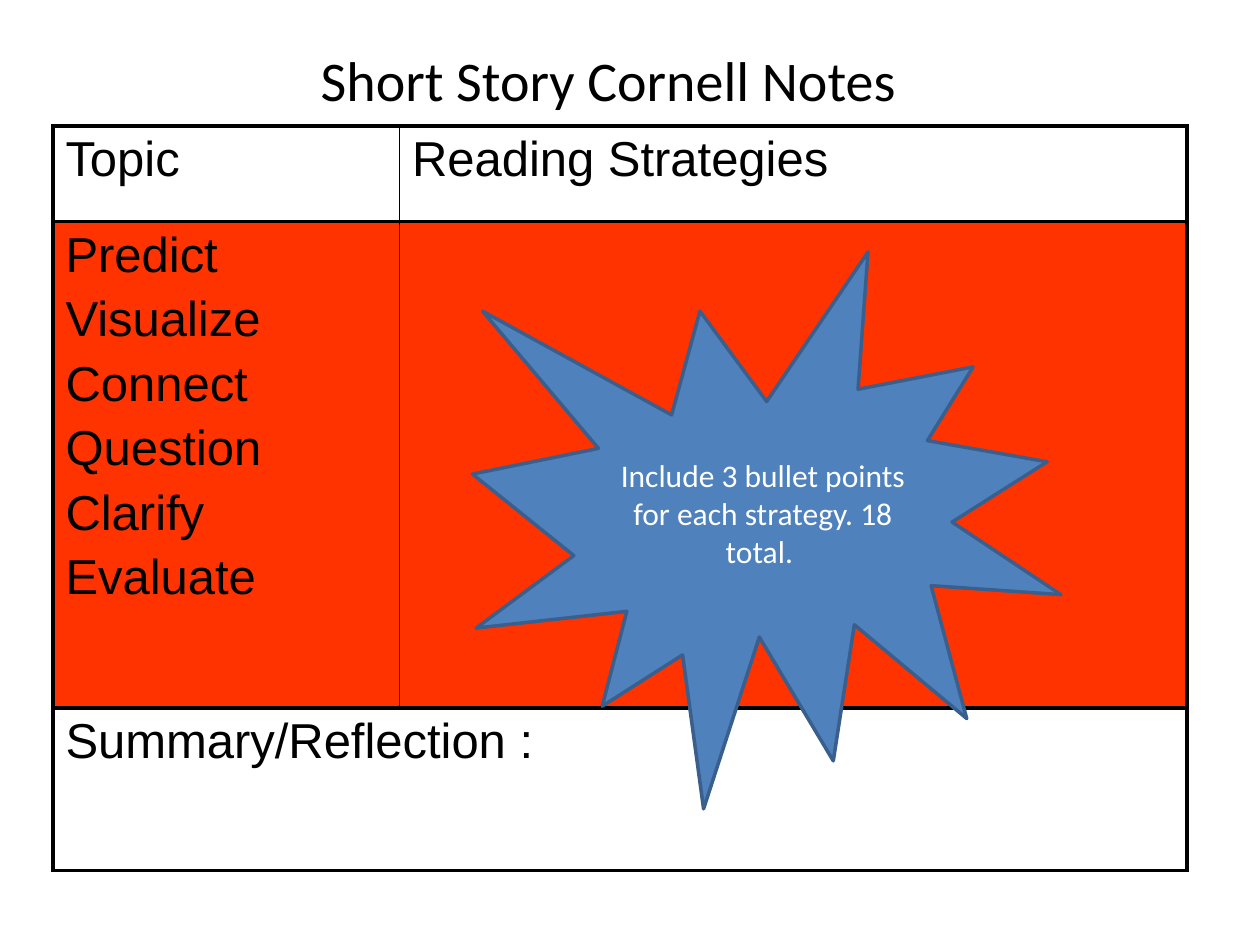
from pptx import Presentation
from pptx.dml.color import RGBColor
from pptx.enum.shapes import MSO_SHAPE
from pptx.enum.text import MSO_ANCHOR, PP_ALIGN
from pptx.oxml.xmlchemy import OxmlElement
from pptx.util import Inches, Pt

COLORS = {"ink": "000000", "strategy": "FF3300", "star": "4F81BD",
          "star_line": "3A5F8C", "star_text": "FFFFFF"}
STRATEGIES = ["Predict", "Visualize", "Connect", "Question", "Clarify", "Evaluate"]
THICK, THIN = 2.25, 1


def rgb(name):
    """Look up a named colour."""
    return RGBColor.from_string(COLORS[name])


def add_run(p, text, size, font, color):
    """Add one formatted run to a paragraph."""
    r = p.add_run()
    r.text = text
    r.font.size, r.font.name = Pt(size), font
    r.font.color.rgb = rgb(color)


def space_before(p, percent):
    """Set paragraph spacing as a share of the text size."""
    spc, pct = OxmlElement("a:spcBef"), OxmlElement("a:spcPct")
    pct.set("val", str(percent * 1000))
    spc.append(pct)
    p._p.get_or_add_pPr().append(spc)


def set_borders(cell, widths):
    """Draw the left, right, top and bottom borders of a cell."""
    tcPr = cell._tc.get_or_add_tcPr()
    for i, (side, width) in enumerate(zip("LRTB", widths)):
        ln, fill, clr = (OxmlElement(t) for t in (f"a:ln{side}", "a:solidFill", "a:srgbClr"))
        ln.set("w", str(Pt(width)))
        clr.set("val", COLORS["ink"])
        fill.append(clr)
        ln.append(fill)
        tcPr.insert(i, ln)


def fill_cell(cell, lines, color, widths):
    """Write lines into a cell and set its fill and borders."""
    if color:
        cell.fill.solid()
        cell.fill.fore_color.rgb = rgb(color)
    else:
        cell.fill.background()
    set_borders(cell, widths)
    tf = cell.text_frame
    for i, line in enumerate(lines):
        p = tf.paragraphs[0] if i == 0 else tf.add_paragraph()
        space_before(p, 20)
        add_run(p, line, 28, "Arial", "ink")


def add_title(s, box, text):
    """Place the slide title in its placeholder."""
    sp = s.shapes.title
    sp.left, sp.top, sp.width, sp.height = map(Inches, box)
    tf = sp.text_frame
    tf.vertical_anchor = MSO_ANCHOR.MIDDLE
    p = tf.paragraphs[0]
    p.alignment = PP_ALIGN.CENTER
    add_run(p, text, 32, "Calibri", "ink")


def add_notes_table(s, box, cols, rows):
    """Place the Cornell grid: headings, strategies and summary."""
    tbl = s.shapes.add_table(len(rows), len(cols), *map(Inches, box)).table
    tbl.first_row = tbl.horz_banding = False
    for col, w in zip(tbl.columns, cols):
        col.width = Inches(w)
    for row, h in zip(tbl.rows, rows):
        row.height = Inches(h)
    left, right = (THICK, THIN, THICK, THICK), (THIN, THICK, THICK, THICK)
    content = [(["Topic"], ["Reading Strategies"], None), (STRATEGIES, [], "strategy")]
    for i, (topic, detail, color) in enumerate(content):
        fill_cell(tbl.cell(i, 0), topic, color, left)
        fill_cell(tbl.cell(i, 1), detail, color, right)
    tbl.cell(2, 0).merge(tbl.cell(2, 1))
    fill_cell(tbl.cell(2, 0), ["Summary/Reflection :"], None, [THICK] * 4)
    fill_cell(tbl.cell(2, 1), [], None, [THICK] * 4)


def add_starburst(s, box, text):
    """Place the starburst with its centred instruction."""
    sp = s.shapes.add_shape(MSO_SHAPE.EXPLOSION1, *map(Inches, box))
    sp.shadow.inherit = False
    sp.fill.solid()
    sp.fill.fore_color.rgb = rgb("star")
    sp.line.color.rgb = rgb("star_line")
    sp.line.width = Pt(2)
    tf = sp.text_frame
    tf.word_wrap = True
    tf.vertical_anchor = MSO_ANCHOR.MIDDLE
    p = tf.paragraphs[0]
    p.alignment = PP_ALIGN.CENTER
    add_run(p, text, 18, "Calibri", "star_text")


def main():
    """Build the slide and save it."""
    prs = Presentation()
    prs.slide_width, prs.slide_height = Inches(10), Inches(7.5)
    s = prs.slides.add_slide(prs.slide_layouts[5])
    add_title(s, (0.33, 0, 9, 1.25), "Short Story Cornell Notes")
    add_notes_table(s, (0.42, 1, 9, 5.91), (2.75, 6.25), (0.76, 3.86, 1.29))
    add_starburst(s, (3.75, 2, 4.67, 4.42),
                  "Include 3 bullet points for each strategy. 18 total. ")
    prs.save("out.pptx")


if __name__ == "__main__":
    main()
